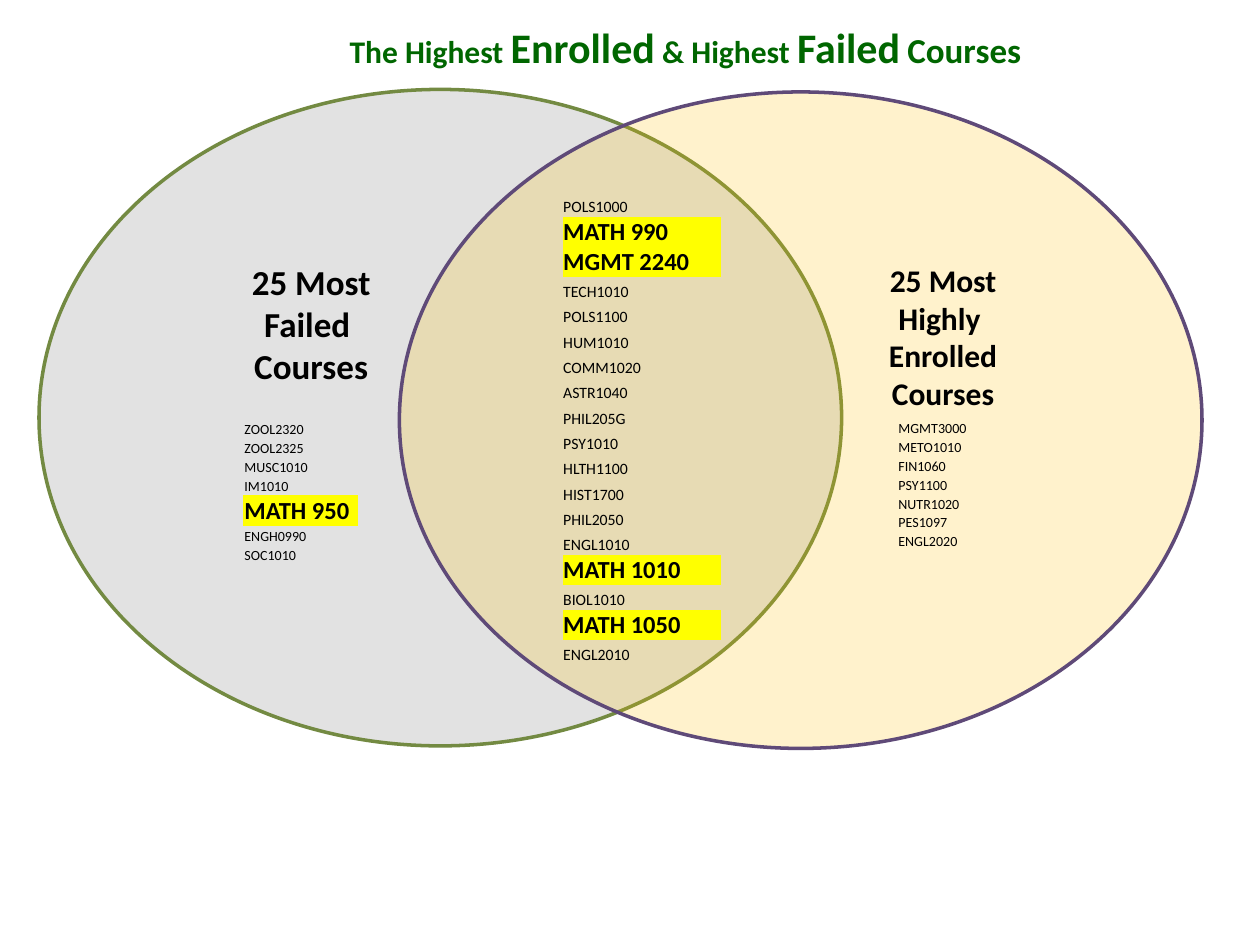
from lxml.etree import SubElement
from pptx import Presentation
from pptx.dml.color import RGBColor
from pptx.enum.shapes import MSO_SHAPE as Preset
from pptx.enum.text import MSO_ANCHOR as Anchor, PP_ALIGN as Align
from pptx.oxml.ns import qn
from pptx.util import Inches, Pt

# The slide is a grid of 100 columns by 75 rows, each cell a tenth of an inch
CELL = Inches(0.1)
COLUMNS, ROWS = 100, 75
FONT = "Calibri"
BLACK, GREEN, YELLOW = "000000", "006600", "FFFF00"
NO_TABLE_STYLE = "{2D5ABB26-0587-4C30-8999-92F81FD0307C}"

SHARED_COURSES = [
    "POLS1000", "MATH 990", "MGMT 2240", "TECH1010", "POLS1100", "HUM1010",
    "COMM1020", "ASTR1040", "PHIL205G", "PSY1010", "HLTH1100", "HIST1700",
    "PHIL2050", "ENGL1010", "MATH 1010", "BIOL1010", "MATH 1050", "ENGL2010",
]
FAILED_COURSES = [
    "ZOOL2320", "ZOOL2325", "MUSC1010", "IM1010", "MATH 950", "ENGH0990",
    "SOC1010",
]
ENROLLED_COURSES = [
    "MGMT3000", "METO1010", "FIN1060", "PSY1100", "NUTR1020", "PES1097",
    "ENGL2020",
]
HIGHLIGHTED = {"MATH 990", "MGMT 2240", "MATH 1010", "MATH 1050", "MATH 950"}


def grid(*cells):
    return [round(CELL * cell) for cell in cells]


def paint(color_format, color):
    color_format.rgb = RGBColor.from_string(color)


def add_run(paragraph, text, size, bold=False, color=BLACK):
    run = paragraph.add_run()
    run.text = text
    run.font.name = FONT
    run.font.size = Pt(size)
    run.font.bold = bold
    paint(run.font.color, color)


def add_circle(slide, left, top, fill, opacity, outline):
    shape = slide.shapes.add_shape(Preset.OVAL, *grid(left, top, 63.7, 52.1))
    shape.shadow.inherit = False
    shape.fill.solid()
    paint(shape.fill.fore_color, fill)
    color = shape.fill._xPr.find(qn("a:solidFill"))[0]
    SubElement(color, qn("a:alpha"), val=str(opacity * 1000))
    paint(shape.line.color, outline)
    shape.line.width = Pt(2)


def add_text_box(slide, left, top, width, height):
    frame = slide.shapes.add_textbox(*grid(left, top, width, height)).text_frame
    frame.word_wrap = True
    paragraph = frame.paragraphs[0]
    paragraph.alignment = Align.CENTER
    return paragraph


def add_heading(slide, area, lines, size):
    paragraph = add_text_box(slide, *area)
    add_run(paragraph, lines[0], size, bold=True)
    for line in lines[1:]:
        paragraph.add_line_break()
        add_run(paragraph, line, size, bold=True)


def add_course_table(slide, courses, left, top, width, row_height, size, inset):
    table = slide.shapes.add_table(
        len(courses), 1, *grid(left, top, width, row_height * len(courses))).table
    table.first_row = table.horz_banding = False
    table._tbl.tblPr.find(qn("a:tableStyleId")).text = NO_TABLE_STYLE
    for row, course in zip(table.rows, courses):
        row.height = grid(row_height)[0]
        cell = row.cells[0]
        cell.margin_left = cell.margin_right = cell.margin_top = Inches(inset)
        cell.margin_bottom = 0
        cell.vertical_anchor = Anchor.BOTTOM
        highlighted = course in HIGHLIGHTED
        if highlighted:
            cell.fill.solid()
            paint(cell.fill.fore_color, YELLOW)
        else:
            cell.fill.background()
        add_run(cell.text_frame.paragraphs[0], course,
                14 if highlighted else size, highlighted)


def add_title(slide):
    paragraph = add_text_box(slide, 25, 1.2, 58.8, 5)
    for text, size in [("The Highest ", 18), ("Enrolled", 24),
                       (" & Highest ", 18), ("Failed", 24), (" ", 18),
                       ("Courses", 20)]:
        add_run(paragraph, text, size, bold=True, color=GREEN)


def main():
    presentation = Presentation()
    presentation.slide_width, presentation.slide_height = grid(COLUMNS, ROWS)
    slide = presentation.slides.add_slide(presentation.slide_layouts[6])

    # Overlapping circles
    add_circle(slide, 3.1, 7.1, "A5A5A5", 32, "738A42")
    add_circle(slide, 31.7, 7.3, "FFC000", 20, "5F4A78")

    # Courses in both circles, then those most failed
    add_course_table(slide, SHARED_COURSES, 44.7, 15.2, 12.5, 2.01, 9, 0)
    add_course_table(slide, FAILED_COURSES, 19.3, 33.3, 9.1, 1.5, 8, 0.01)

    # Circle headings
    add_heading(slide, (17.5, 20.2, 14.4, 11.1),
                ["25 Most Failed ", "Courses"], 20)
    add_heading(slide, (66.7, 20.2, 16.3, 13.1),
                ["25 Most Highly ", "Enrolled Courses"], 18)

    # Most enrolled courses and the title
    add_course_table(slide, ENROLLED_COURSES, 71.2, 33.2, 9, 1.5, 8, 0.01)
    add_title(slide)

    presentation.save("out.pptx")


if __name__ == "__main__":
    main()
